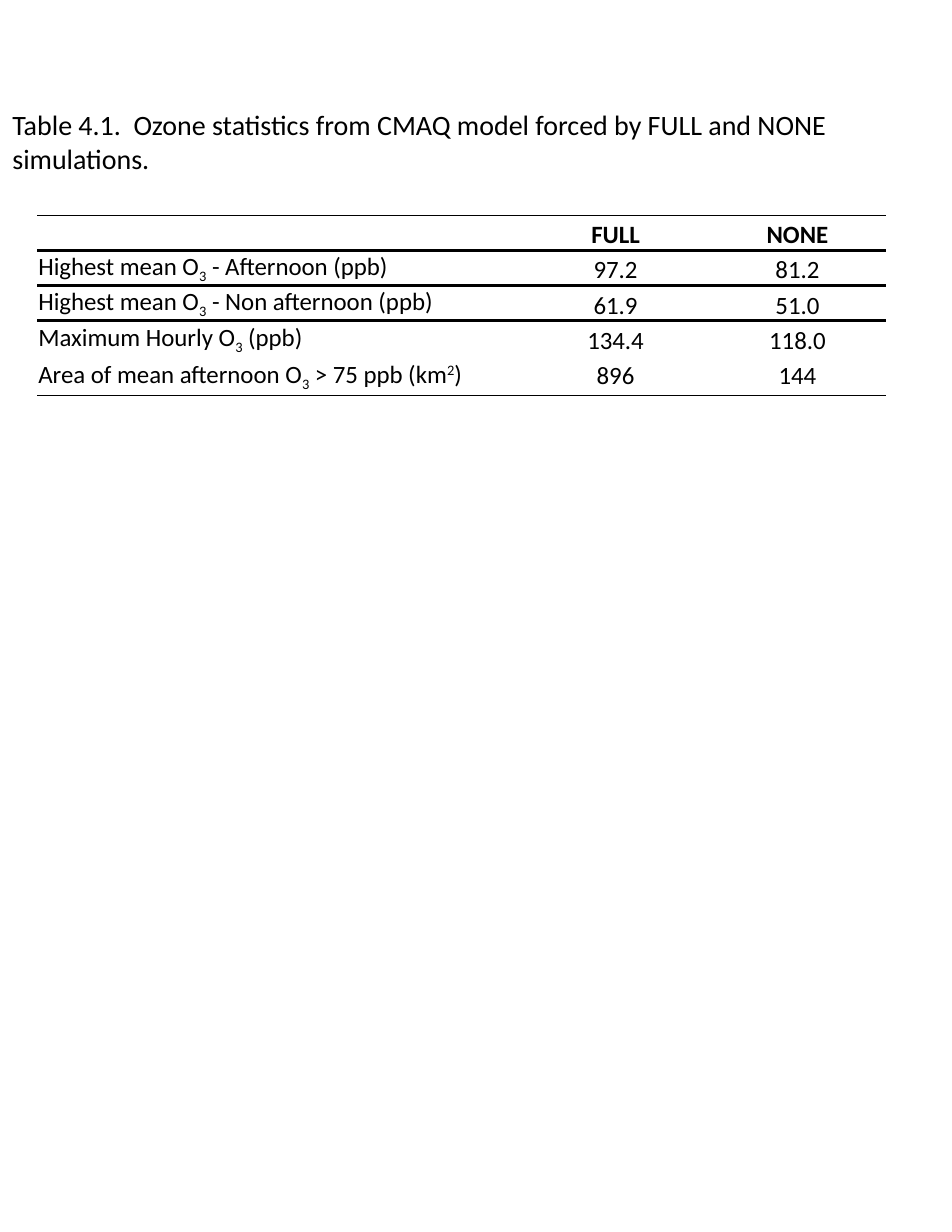
from lxml import etree
from pptx import Presentation
from pptx.dml.color import RGBColor
from pptx.enum import text
from pptx.oxml import ns
from pptx.util import Cm, Pt

COLORS = {"ink": "000000"}
CAPTION = "Table 4.1.  Ozone statistics from CMAQ model forced by FULL and NONE simulations."
# "|" separates runs; a run starting with "_" is a subscript, with "^" a superscript
STATISTICS = [
    ("", "FULL", "NONE"),
    ("Highest mean O|_3| - Afternoon (ppb)", "97.2", "81.2"),
    ("Highest mean O|_3| - Non afternoon (ppb)", "61.9", "51.0"),
    ("Maximum Hourly O|_3| (ppb)", "134.4", "118.0"),
    ("Area of mean afternoon O|_3| > 75 ppb (km|^2|)", "896", "144"),
]
COLUMN_WIDTHS = [11, 4.24, 4.01]
ROW_HEIGHTS = [0.79, 0.79, 0.74, 0.79, 0.89]
THIN, THICK = 1, 2.25
# row: (top, bottom) line width in points
RULES = {0: (THIN, THICK), 1: (THICK, THICK), 2: (THICK, None), 4: (None, THIN)}
BASELINES = {"_": "-25000", "^": "30000"}
NO_STYLE = "{2D5ABB26-0587-4C30-8999-92F81FD0307C}"


def write(frame, content, size=16, bold=False, align=text.PP_ALIGN.LEFT):
    paragraph = frame.paragraphs[0]
    paragraph.alignment = align
    for piece in content.split("|"):
        run = paragraph.add_run()
        font = run.font
        font.name, font.size, font.bold = "Calibri", Pt(size), bold
        font.color.rgb = RGBColor.from_string(COLORS["ink"])
        baseline = BASELINES.get(piece[:1])
        run.text = piece[1:] if baseline else piece
        if baseline:
            font._element.set("baseline", baseline)


def rule_cell(cell, top, bottom):
    """Draw the cell's horizontal borders."""
    properties = cell._tc.get_or_add_tcPr()
    borders = [(side, width) for side, width in (("a:lnT", top), ("a:lnB", bottom)) if width]
    for position, (side, width) in enumerate(borders):
        line = etree.Element(ns.qn(side), w=str(Pt(width)))
        fill = etree.SubElement(line, ns.qn("a:solidFill"))
        etree.SubElement(fill, ns.qn("a:srgbClr"), val=COLORS["ink"])
        properties.insert(position, line)


def add_statistics(slide):
    frame = slide.shapes.add_table(
        len(STATISTICS), len(COLUMN_WIDTHS), Cm(0.84), Cm(4.88),
        Cm(sum(COLUMN_WIDTHS)), Cm(sum(ROW_HEIGHTS)))
    table = frame.table
    table.first_row = table.horz_banding = False
    table._tbl.tblPr.find(ns.qn("a:tableStyleId")).text = NO_STYLE
    for column, width in zip(table.columns, COLUMN_WIDTHS):
        column.width = Cm(width)
    last = len(STATISTICS) - 1
    for r, statistic in enumerate(STATISTICS):
        table.rows[r].height = Cm(ROW_HEIGHTS[r])
        for c, content in enumerate(statistic):
            cell = table.cell(r, c)
            cell.margin_left = cell.margin_right = cell.margin_top = Cm(0.03)
            cell.margin_bottom = 0
            cell.vertical_anchor = text.MSO_ANCHOR.MIDDLE if r == last else text.MSO_ANCHOR.BOTTOM
            cell.fill.background()
            write(cell.text_frame, content, bold=r == 0,
                  align=text.PP_ALIGN.CENTER if c else text.PP_ALIGN.LEFT)
            rule_cell(cell, *RULES.get(r, (None, None)))


def main():
    presentation = Presentation()
    presentation.slide_width, presentation.slide_height = Cm(21.59), Cm(27.94)
    slide = presentation.slides.add_slide(presentation.slide_layouts[6])
    caption = slide.shapes.add_textbox(0, Cm(2.29), Cm(21.64), Cm(1.83)).text_frame
    caption.word_wrap = True
    caption.margin_left = caption.margin_right = Cm(0.28)
    caption.margin_top = caption.margin_bottom = Cm(0.15)
    write(caption, CAPTION, size=18)
    add_statistics(slide)
    presentation.save("out.pptx")


if __name__ == "__main__":
    main()
